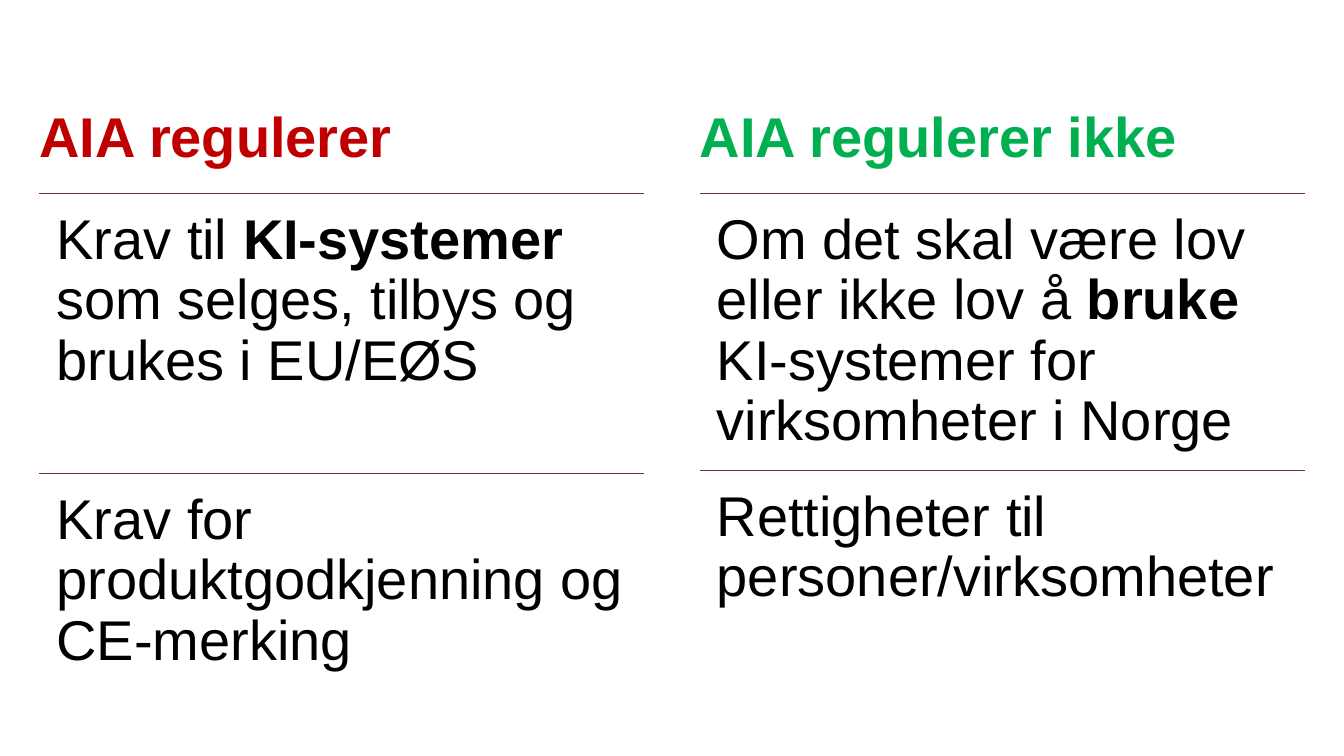
from lxml.etree import SubElement
from pptx import Presentation
from pptx.dml.color import RGBColor
from pptx.enum.shapes import MSO_CONNECTOR
from pptx.enum.text import MSO_ANCHOR, PP_ALIGN
from pptx.oxml.ns import qn
from pptx.util import Pt

PX = 9144
RED = RGBColor(0xC0, 0x00, 0x00)
GREEN = RGBColor(0x00, 0xB0, 0x50)
BLACK = RGBColor(0x00, 0x00, 0x00)
WINE = RGBColor(0x6F, 0x2C, 0x3F)

COLUMN_WIDTH = 600
HEADING_TOP, HEADING_HEIGHT = 108, 71
BODY_TOP, BODY_BOTTOM = 192, 663

COLUMNS = [
    (39, "AIA regulerer", RED, 470, [
        [("Krav til ", False), ("KI-systemer", True),
         (" som selges, tilbys og brukes i EU/EØS", False)],
        [("Krav for produktgodkjenning og CE-merking", False)],
    ]),
    (694, "AIA regulerer ikke", GREEN, 467, [
        [("Om det skal være lov eller ikke lov å ", False), ("bruke", True),
         (" KI-systemer for virksomheter i Norge", False)],
        [("Rettigheter til personer/virksomheter", False)],
    ]),
]


def add_text(left, top, height, inset, color, spans):
    box = page.shapes.add_textbox(left * PX, top * PX, COLUMN_WIDTH * PX, height * PX)
    frame = box.text_frame
    frame.word_wrap = True
    frame.vertical_anchor = MSO_ANCHOR.TOP
    frame.margin_left = frame.margin_right = inset * PX
    frame.margin_top = frame.margin_bottom = inset * PX
    para = frame.paragraphs[0]
    para.alignment = PP_ALIGN.LEFT
    para.line_spacing = 0.9
    para.font.name = "Arial"
    para.font.size = Pt(40)
    para.font.color.rgb = color
    for text, bold in spans:
        span = para.add_run()
        span.text = text
        span.font.bold = bold


def add_rule(left, top):
    rule = page.shapes.add_connector(
        MSO_CONNECTOR.STRAIGHT, left * PX, top * PX, (left + COLUMN_WIDTH) * PX, top * PX)
    rule.line.color.rgb = WINE
    rule.line.width = Pt(1)
    SubElement(rule._element.spPr, qn("a:effectLst"))


deck = Presentation()
deck.slide_width = 1333 * PX
deck.slide_height = 750 * PX
page = deck.slides.add_slide(deck.slide_layouts[6])

for left, heading, color, split, entries in COLUMNS:
    add_text(left, HEADING_TOP, HEADING_HEIGHT, 0, color, [(heading, True)])
    edges = [BODY_TOP, split, BODY_BOTTOM]
    for top, bottom, spans in zip(edges, edges[1:], entries):
        add_rule(left, top)
        add_text(left, top, bottom - top, 17, BLACK, spans)

deck.save("out.pptx")
